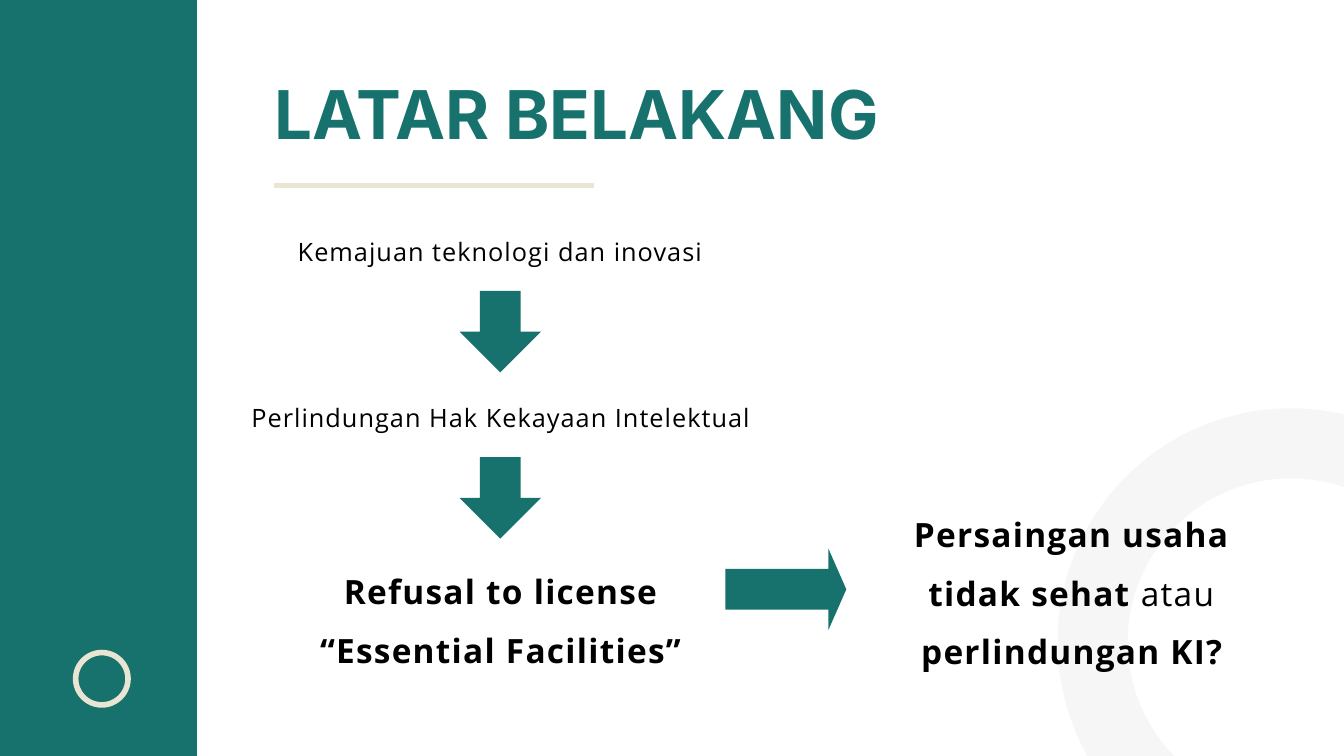
"""Build the LATAR BELAKANG slide: a flow from innovation to refusal to license."""
import pptx
import pptx.util
import pptx.dml.color
import pptx.enum.shapes
import pptx.enum.text
import lxml.etree

Cm, Pt = pptx.util.Cm, pptx.util.Pt
KIND = pptx.enum.shapes.MSO_SHAPE
ALIGN = pptx.enum.text.PP_ALIGN
TEAL, SAND, PALE = "17726D", "EAE4D2", "F6F6F6"


def tint(item, color):
    if hasattr(item, "solid"):
        item.solid()
        item = item.fore_color
    item.rgb = pptx.dml.color.RGBColor.from_string(color)


def write(box, paras, size, lead, font="Open Sans", color="000000", align=ALIGN.CENTER, gap=0):
    frame = box.text_frame
    frame.word_wrap = True
    frame.auto_size = pptx.enum.text.MSO_AUTO_SIZE.NONE
    frame.vertical_anchor = pptx.enum.text.MSO_ANCHOR.TOP
    frame.margin_left = frame.margin_right = frame.margin_top = frame.margin_bottom = 0
    for num, runs in enumerate(paras):
        para = frame.add_paragraph() if num else frame.paragraphs[0]
        para.alignment = align
        para.line_spacing = Pt(lead)
        para.space_before = Pt(0)
        for text, bold in runs:
            run = para.add_run()
            run.text = text
            run.font.name, run.font.size, run.font.bold = font, Pt(size), bold
            tint(run.font.color, color)
            run._r.get_or_add_rPr().set("spc", str(round(gap * 100)))


deck = pptx.Presentation()
deck.slide_width, deck.slide_height = Cm(50.8), Cm(28.58)
slide = deck.slides.add_slide(deck.slide_layouts[5])
shapes = slide.shapes
tint(slide.background.fill, "FFFFFF")

title = shapes.title
title.left, title.top, title.width, title.height = Cm(10.36), Cm(3.12), Cm(23.95), Cm(2.77)
write(title, [[("LATAR BELAKANG", True)]], 72, 75.6, font="Inter", color=TEAL, align=ALIGN.LEFT)

rule = shapes.add_connector(pptx.enum.shapes.MSO_CONNECTOR.STRAIGHT, Cm(10.36), Cm(7.01), Cm(22.45), Cm(7.01))
tint(rule.line.fill, SAND)
rule.line.width = Pt(6)
lxml.etree.SubElement(rule._element.spPr, pptx.oxml.ns.qn("a:effectLst"))

solids = [
    (KIND.RECTANGLE, 0, 0, 7.44, 28.58, []),
    (KIND.DOWN_ARROW, 17.37, 11, 3.08, 3.08, [0.5, 0.5]),
    (KIND.DOWN_ARROW, 17.37, 17.28, 3.08, 3.08, [0.5, 0.5]),
    (KIND.RIGHT_ARROW, 27.42, 20.74, 4.57, 3.08, [0.5, 0.22]),
]
for kind, left, top, width, height, bends in solids:
    solid = shapes.add_shape(kind, Cm(left), Cm(top), Cm(width), Cm(height))
    solid.shadow.inherit = False
    tint(solid.fill, TEAL)
    solid.line.fill.background()
    for num, bend in enumerate(bends):
        solid.adjustments[num] = bend

for left, top, size, color, weight in [(2.86, 24.67, 1.98, SAND, 6), (41.3, 16.76, 15.01, PALE, 75)]:
    ring = shapes.add_shape(KIND.OVAL, Cm(left), Cm(top), Cm(size), Cm(size))
    ring.shadow.inherit = False
    ring.fill.background()
    tint(ring.line.fill, color)
    ring.line.width = Pt(weight)

small = dict(size=27.1, lead=47.7, gap=1.1)
large = dict(size=35.8, lead=63, gap=1.4)
notes = [
    (10.36, 8.41, 17.09, 1.55, small, [[("Kemajuan teknologi dan inovasi", False)]]),
    (7.95, 14.68, 21.97, 1.55, small, [[("Perlindungan Hak Kekayaan Intelektual", False)]]),
    (12.04, 20.9, 13.77, 4.27, large, [[("Refusal to license", True)], [("“Essential Facilities”", True)]]),
    (33.63, 18.72, 13.77, 6.38, large,
     [[("Persaingan usaha tidak sehat ", True), ("atau ", False), ("perlindungan KI?", True)]]),
]
for left, top, width, height, style, paras in notes:
    box = shapes.add_textbox(Cm(left), Cm(top), Cm(width), Cm(height))
    write(box, paras, **style)

deck.save("out.pptx")
